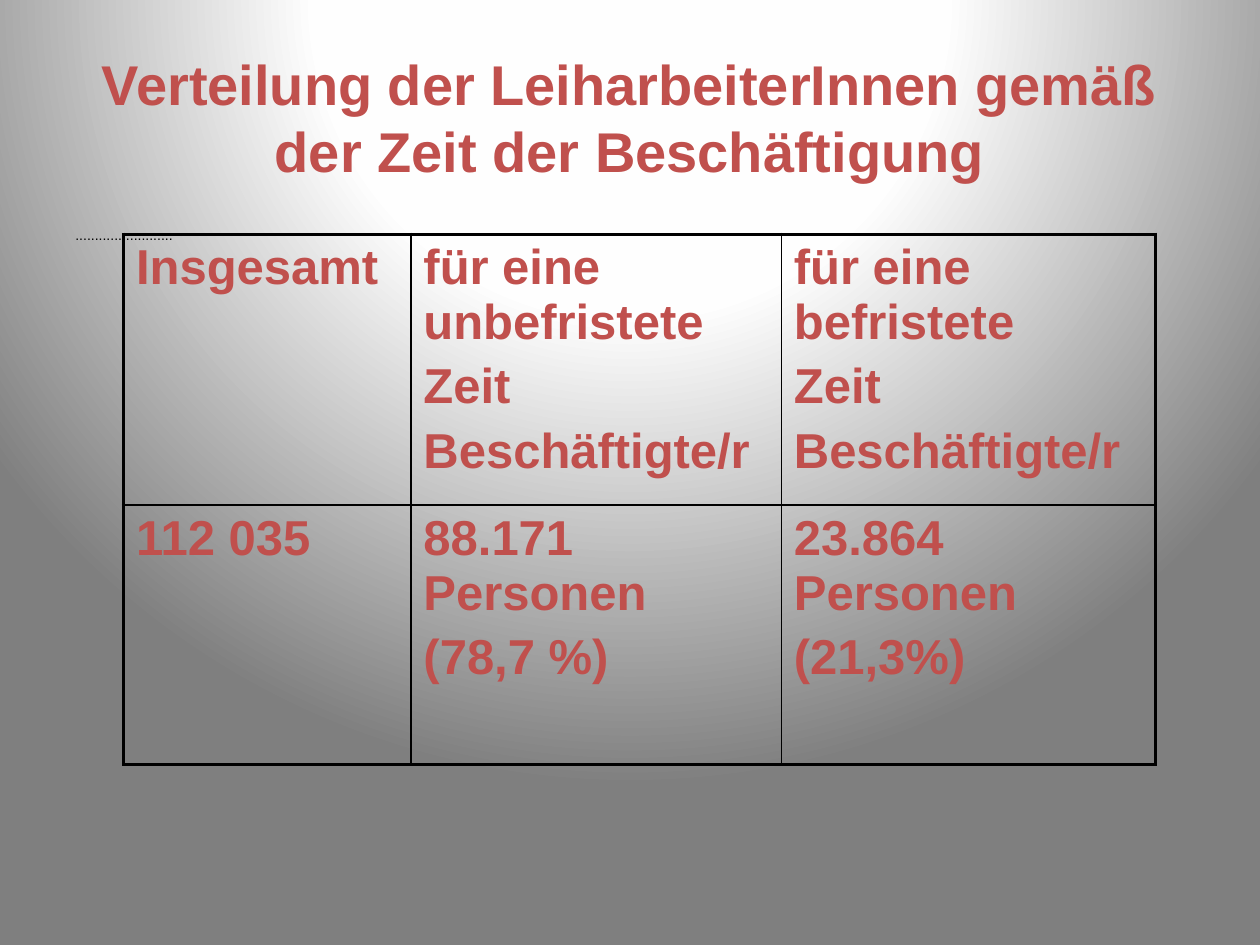
from lxml.etree import SubElement
from pptx import Presentation
from pptx.dml.color import RGBColor
from pptx.enum.text import MSO_ANCHOR, PP_ALIGN
from pptx.oxml import parse_xml
from pptx.oxml.ns import nsdecls, qn
from pptx.util import Pt

RED, BLACK = "C0504D", "000000"
THICK, THIN = 2.25, 1
COLUMN_WIDTHS = [164.2, 211.7, 213.8]
ROW_HEIGHTS = [154.8, 148.3]
CELL_TEXTS = [
    [["Insgesamt"],
     ["für eine unbefristete", "Zeit", "Beschäftigte/r"],
     ["für eine befristete", "Zeit", "Beschäftigte/r"]],
    [["112 035"],
     ["88.171 Personen", "(78,7 %)"],
     ["23.864 Personen", "(21,3%)"]],
]
STOPS = [(0, "FFFFFF"), (40, "FEFEFE"), (100, "7F7F7F")]


def color(value):
    """Turn a hex string into a colour."""
    return RGBColor.from_string(value)


def set_background(page):
    """Fill the page with a radial gradient centred above its top edge."""
    stops = "".join(
        f'<a:gs pos="{position * 1000}"><a:srgbClr val="{value}"/></a:gs>'
        for position, value in STOPS)
    background = parse_xml(
        f'<p:bg {nsdecls("p", "a")}><p:bgPr><a:gradFill rotWithShape="1">'
        f'<a:gsLst>{stops}</a:gsLst><a:path path="circle">'
        '<a:fillToRect l="50000" t="-80000" r="50000" b="180000"/>'
        '</a:path></a:gradFill><a:effectLst/></p:bgPr></p:bg>')
    page.element.cSld.insert(0, background)


def write(frame, lines, size, value, bold=False, align=PP_ALIGN.LEFT, before=20):
    """Write one paragraph per line, with spacing before in percent."""
    frame.word_wrap = True
    for index, line in enumerate(lines):
        para = frame.add_paragraph() if index else frame.paragraphs[0]
        para.alignment = align
        if before:
            spacing = SubElement(para._p.get_or_add_pPr(), qn("a:spcBef"))
            SubElement(spacing, qn("a:spcPct")).set("val", str(before * 1000))
        span = para.add_run()
        span.text = line
        for name, setting in {"name": "Arial", "size": Pt(size), "bold": bold}.items():
            setattr(span.font, name, setting)
        span.font.color.rgb = color(value)


def add_text(page, place, lines, size, value, anchor=MSO_ANCHOR.TOP, **style):
    """Add a text box and return it."""
    box = page.shapes.add_textbox(*map(Pt, place))
    box.text_frame.vertical_anchor = anchor
    write(box.text_frame, lines, size, value, **style)
    return box


def set_borders(cell, widths):
    """Draw the black cell borders, given by side."""
    properties = cell._tc.get_or_add_tcPr()
    for side, width in widths.items():
        line = SubElement(properties, qn(f"a:ln{side}"), w=str(Pt(width)))
        fill = SubElement(line, qn("a:solidFill"))
        SubElement(fill, qn("a:srgbClr"), val=BLACK)


def add_grid(page, left, top):
    """Add the table with a thick frame and thin inner lines."""
    rows, columns = len(ROW_HEIGHTS), len(COLUMN_WIDTHS)
    table = page.shapes.add_table(
        rows, columns, Pt(left), Pt(top),
        Pt(sum(COLUMN_WIDTHS)), Pt(sum(ROW_HEIGHTS))).table
    table.first_row = table.horz_banding = False
    for column, width in zip(table.columns, COLUMN_WIDTHS):
        column.width = Pt(width)
    for row, height in zip(table.rows, ROW_HEIGHTS):
        row.height = Pt(height)
    for r, texts in enumerate(CELL_TEXTS):
        for c, lines in enumerate(texts):
            cell = table.cell(r, c)
            write(cell.text_frame, lines, 28, RED, bold=True)
            set_borders(cell, {
                "L": THICK if c == 0 else THIN,
                "R": THICK if c == columns - 1 else THIN,
                "T": THICK if r == 0 else THIN,
                "B": THICK if r == rows - 1 else THIN,
            })
            cell.fill.background()


def main():
    """Build the slide and save it."""
    deck = Presentation()
    deck.slide_width, deck.slide_height = Pt(720), Pt(540)
    page = deck.slides.add_slide(deck.slide_layouts[6])
    set_background(page)
    add_text(page, (36, 21.6, 648, 90),
             ["Verteilung der LeiharbeiterInnen gemäß der Zeit der Beschäftigung"],
             32, RED, MSO_ANCHOR.MIDDLE, bold=True, align=PP_ALIGN.CENTER, before=0)
    dots = add_text(page, (36, 126, 648, 356.4), ["." * 25], 8, BLACK)
    indent = dots.text_frame.paragraphs[0]._p.get_or_add_pPr()
    for name, length in {"marL": 27, "indent": -27}.items():
        indent.set(name, str(Pt(length)))
    add_grid(page, 70.6, 133.9)
    deck.save("out.pptx")


if __name__ == "__main__":
    main()
